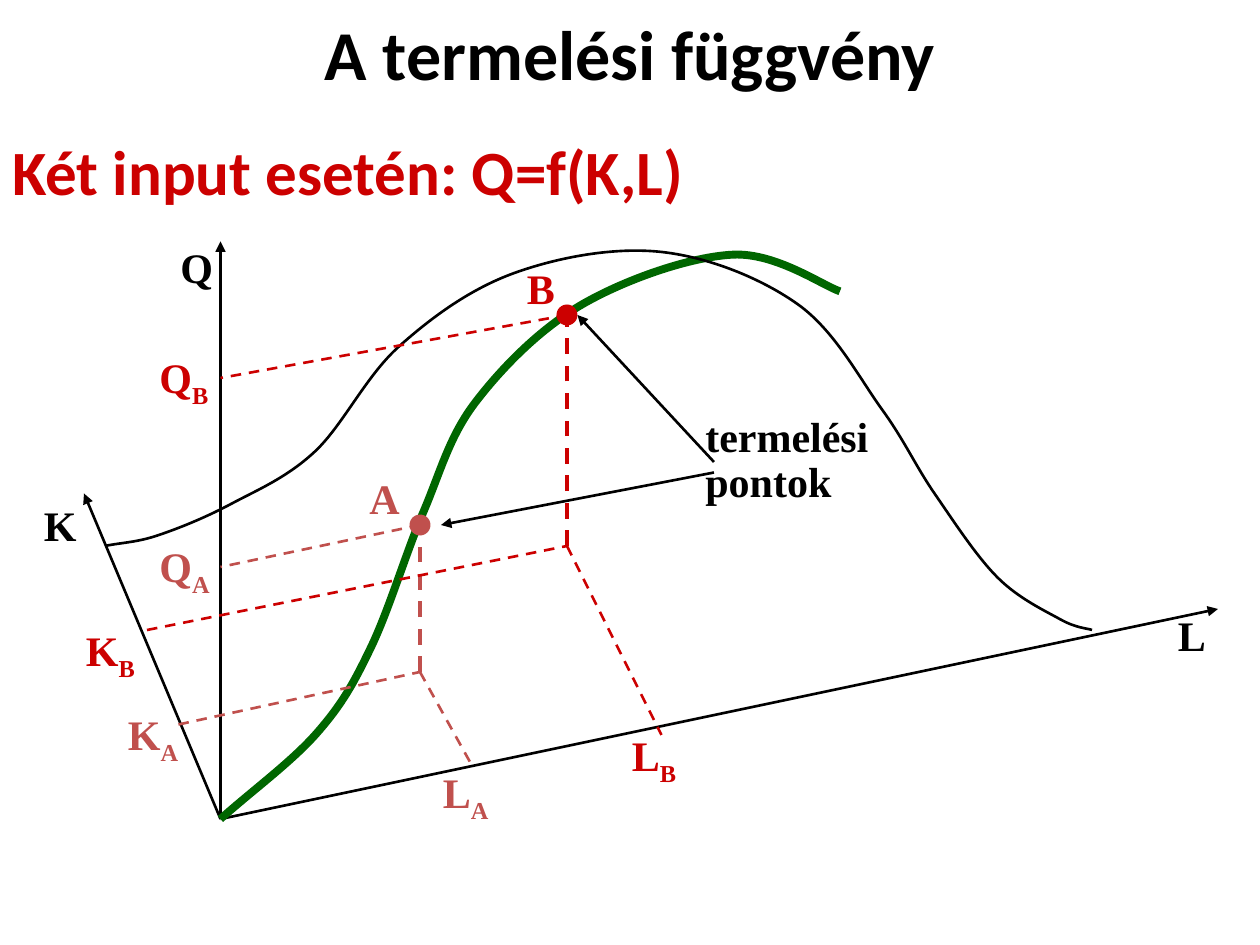
import pptx
import pptx.util
from dataclasses import dataclass
from lxml import etree
from pptx.dml.color import RGBColor
from pptx.enum.dml import MSO_LINE
from pptx.enum.shapes import MSO_CONNECTOR, MSO_SHAPE
from pptx.enum.text import MSO_ANCHOR, PP_ALIGN
from pptx.oxml.ns import qn

Pt = pptx.util.Pt


@dataclass(frozen=True)
class Theme:
    black: RGBColor = RGBColor(0x00, 0x00, 0x00)
    red: RGBColor = RGBColor(0xCC, 0x00, 0x00)
    rose: RGBColor = RGBColor(0xC0, 0x50, 0x4D)
    green: RGBColor = RGBColor(0x00, 0x66, 0x00)
    heading_font: str = "Calibri"
    label_font: str = "Times New Roman"
    title_size: int = 40
    subtitle_size: int = 36
    label_size: int = 24
    thin: float = 1.5
    medium: float = 2.25
    thick: float = 4.5


THEME = Theme()


def add_text(slide, box, text, size, font, color, subscript=""):
    frame = slide.shapes.add_textbox(*map(Pt, box)).text_frame
    frame.word_wrap = True
    paragraph = frame.paragraphs[0]
    paragraph.font.size = Pt(size)
    paragraph.font.name = font
    paragraph.font.bold = True
    paragraph.font.color.rgb = color
    paragraph.add_run().text = text
    if subscript:
        lowered = paragraph.add_run()
        lowered.text = subscript
        lowered._r.get_or_add_rPr().set("baseline", "-25000")
    return frame


def add_heading(slide, box):
    frame = add_text(slide, box, "A termelési függvény", THEME.title_size,
                     THEME.heading_font, THEME.black)
    frame.vertical_anchor = MSO_ANCHOR.MIDDLE
    frame.paragraphs[0].alignment = PP_ALIGN.CENTER


def add_subtitle(slide, box):
    add_text(slide, box, "Két input esetén: Q=f(K,L)", THEME.subtitle_size,
             THEME.heading_font, THEME.red)


def add_line(slide, start, end, color, width=THEME.thin, dashed=False, arrow=False):
    connector = slide.shapes.add_connector(
        MSO_CONNECTOR.STRAIGHT, *map(Pt, (*start, *end)))
    connector.line.color.rgb = color
    connector.line.width = Pt(width)
    if dashed:
        connector.line.dash_style = MSO_LINE.DASH
    properties = connector._element.spPr
    if arrow:
        tail = etree.SubElement(properties.find(qn("a:ln")), qn("a:tailEnd"))
        tail.set("type", "triangle")
    etree.SubElement(properties, qn("a:effectLst"))


def add_curve(slide, knots, color, width):
    """Smooth open curve through the knots, with Catmull-Rom control points."""
    builder = slide.shapes.build_freeform(Pt(knots[0][0]), Pt(knots[0][1]))
    builder.add_line_segments([(Pt(x), Pt(y)) for x, y in knots[1:]], close=False)
    curve = builder.convert_to_shape()
    curve.shadow.inherit = False
    curve.fill.background()
    curve.line.color.rgb = color
    curve.line.width = Pt(width)

    (x0, y0), (x1, y1) = knots[:2]
    points = [(2 * x0 - x1, 2 * y0 - y1), *knots, knots[-1]]
    segments = list(curve._element.iter(qn("a:lnTo")))
    for segment, before, start, end, after in zip(
            segments, points, points[1:], points[2:], points[3:]):
        first = [s + (e - b) / 6 for b, s, e in zip(before, start, end)]
        second = [e - (a - s) / 6 for s, e, a in zip(start, end, after)]
        bezier = etree.Element(qn("a:cubicBezTo"))
        for x, y in (first, second, end):
            point = etree.SubElement(bezier, qn("a:pt"))
            point.set("x", str(Pt(x) - curve.left))
            point.set("y", str(Pt(y) - curve.top))
        segment.getparent().replace(segment, bezier)


def add_diagram(slide, box):
    left, top = box[:2]

    def at(x, y):
        return left + x, top + y

    def label(x, y, width, text, color, subscript="", height=33):
        frame = add_text(slide, (*at(x, y), width, height), text,
                         THEME.label_size, THEME.label_font, color, subscript)
        frame.paragraphs[0].line_spacing = 0.9

    # Axes L, K and Q
    for axis_end in ((696, 216), (48, 150), (126, 6)):
        add_line(slide, at(126, 336), at(*axis_end), THEME.black, arrow=True)

    # Production curve and outline of the production hill
    production = [(126, 336), (181, 287), (212, 238), (242, 160.5),
                  (272, 97.5), (333.5, 41.5), (419, 13.5), (480, 34.5)]
    hill = [(60, 180), (90, 174), (132, 156), (180, 126), (228, 66),
            (294, 24), (378, 12), (456, 42), (504, 102), (534, 150),
            (570, 198), (606, 222), (624, 228)]
    add_curve(slide, [at(*knot) for knot in production], THEME.green, THEME.thick)
    add_curve(slide, [at(*knot) for knot in hill], THEME.black, THEME.thin)

    # Production points: dot, floor point, then projections on K, L and Q
    production_points = (
        ("A", THEME.rose, (240, 168), (240, 252), (102, 282), (270, 306), (126, 192)),
        ("B", THEME.red, (324, 48), (324, 180), (84, 228), (378, 288), (126, 84)),
    )
    for _, color, dot, floor, on_k, on_l, on_q in production_points:
        for start, end in ((on_k, floor), (floor, on_l), (dot, on_q)):
            add_line(slide, at(*start), at(*end), color, dashed=True)
        add_line(slide, at(*floor), at(*dot), color, THEME.medium, dashed=True)

    radius = 6
    for name, color, (x, y), *_ in production_points:
        marker = slide.shapes.add_shape(
            MSO_SHAPE.OVAL,
            *map(Pt, (*at(x - radius, y - radius), 2 * radius, 2 * radius)))
        marker.shadow.inherit = False
        marker.fill.solid()
        marker.fill.fore_color.rgb = color
        marker.line.fill.background()
        label(x - 36 + radius * (name == "B"), y - 30, 30, name, color)

    # Axis names
    for name, x, y in (("K", 18, 153), ("L", 666, 216), ("Q", 96, 6)):
        label(x, y, 36, name, THEME.black)

    # Callout pointing at both production points
    add_line(slide, at(408, 132), at(330, 48), THEME.black, arrow=True)
    add_line(slide, at(408, 138), at(252, 168), THEME.black, arrow=True)
    label(396, 102, 114, "termelési pontok", THEME.black, height=59)

    # Names of the projected quantities
    for name, subscript, x, y, color in (
            ("K", "B", 42, 222, THEME.red), ("K", "A", 66, 270, THEME.rose),
            ("L", "A", 246, 303, THEME.rose), ("L", "B", 354, 282, THEME.red),
            ("Q", "A", 84, 174, THEME.rose), ("Q", "B", 84, 66, THEME.red)):
        label(x, y, 48, name, color, subscript)


def main():
    presentation = pptx.Presentation()
    presentation.slide_width = Pt(720)
    presentation.slide_height = Pt(540)
    slide = presentation.slides.add_slide(presentation.slide_layouts[6])
    add_heading(slide, (54, 0, 612, 60))
    add_subtitle(slide, (0, 72, 720, 54))
    add_diagram(slide, (0, 132, 720, 348))
    presentation.save("out.pptx")


if __name__ == "__main__":
    main()
